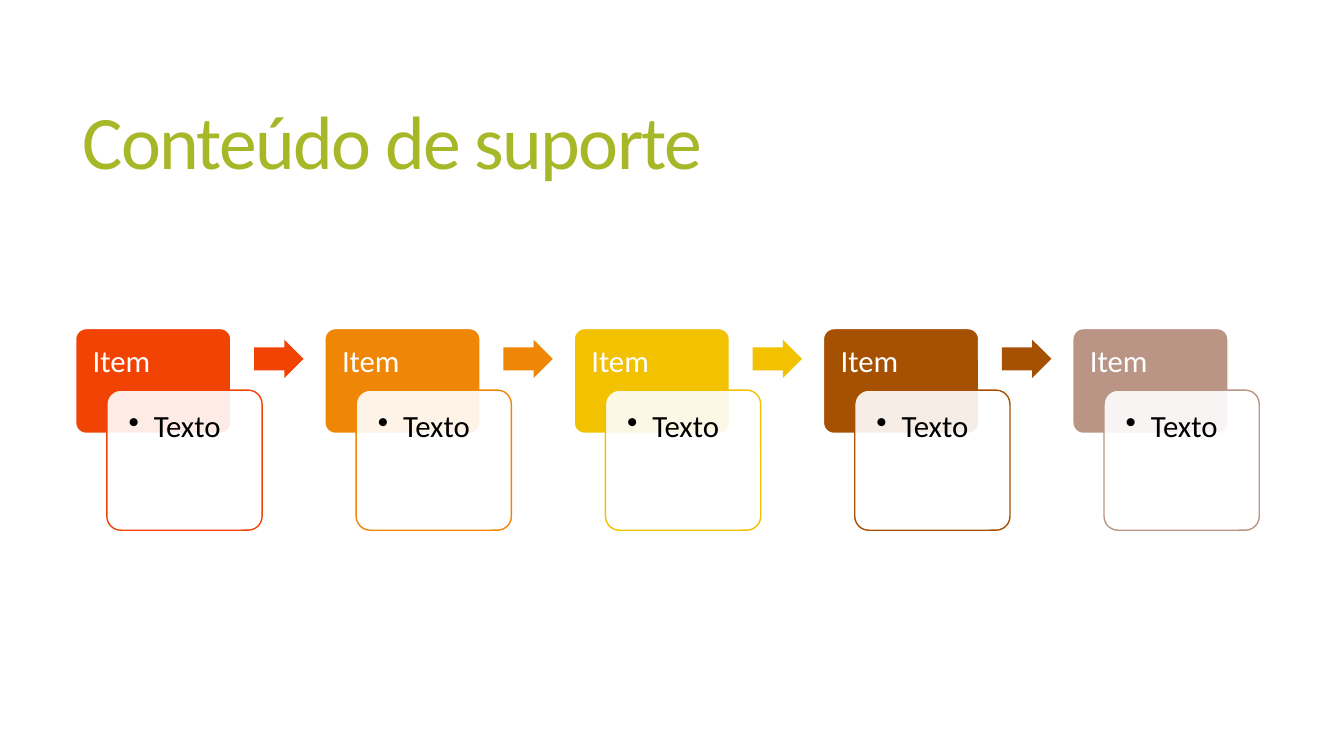
import lxml.etree
import pptx
import pptx.dml.color
import pptx.enum.shapes
import pptx.enum.text
import pptx.oxml.ns
import pptx.util

Inches = pptx.util.Inches
Pt = pptx.util.Pt
Preset = pptx.enum.shapes.MSO_SHAPE
Anchor = pptx.enum.text.MSO_ANCHOR
qn = pptx.oxml.ns.qn

FONT = "Calibri"
STEP_COLORS = ["F04304", "EF8606", "F2C100", "A65001", "BA9585"]
FLOW_LEFT, FLOW_TOP = 0.75, 3.26
STEP_PITCH = 2.4725
TILE_WIDTH, TILE_HEIGHT = 1.54, 1.04
CARD_HEIGHT = 1.39
CARD_SHIFT_X, CARD_SHIFT_Y = 0.31, 0.61
CARD_MARGIN = 0.045
INSET = 0.17
ARROW_SHIFT_X, ARROW_SHIFT_Y = 1.77, 0.11
ARROW_WIDTH, ARROW_HEIGHT = 0.49, 0.38


def rgb(color):
    """Turn a hex string into a colour."""
    return pptx.dml.color.RGBColor.from_string(color)


def add_block(slide, preset, box, fill, line=None, adjustments=(0.1,), opacity=None):
    """Add a flat preset shape, outlined and see-through on request."""
    block = slide.shapes.add_shape(preset, *map(Inches, box))
    block.shadow.inherit = False
    for index, value in enumerate(adjustments):
        block.adjustments[index] = value
    block.fill.solid()
    block.fill.fore_color.rgb = rgb(fill)
    if opacity is not None:
        fill_color = block.fill._xPr.find(qn("a:solidFill"))[0]
        lxml.etree.SubElement(fill_color, qn("a:alpha"), val=str(opacity * 1000))
    if line:
        block.line.color.rgb = rgb(line)
        block.line.width = Pt(1)
    else:
        block.line.fill.background()


def format_paragraph(paragraph, size, color, line_spacing):
    """Set the font and line spacing of a paragraph."""
    paragraph.alignment = pptx.enum.text.PP_ALIGN.LEFT
    paragraph.line_spacing = line_spacing
    paragraph.font.name = FONT
    paragraph.font.size = Pt(size)
    paragraph.font.color.rgb = rgb(color)


def add_label(slide, box, text, color, bottom_inset, space_after, bulleted=False):
    """Add a top-anchored label, with a bullet on request."""
    frame = slide.shapes.add_textbox(*map(Inches, box)).text_frame
    frame.word_wrap = True
    frame.vertical_anchor = Anchor.TOP
    frame.margin_left = frame.margin_top = frame.margin_right = Inches(INSET)
    frame.margin_bottom = Inches(bottom_inset)
    paragraph = frame.paragraphs[0]
    paragraph.text = text
    if bulleted:
        paragraph.level = 1
        properties = paragraph._p.get_or_add_pPr()
        properties.set("marL", str(Inches(0.25)))
        properties.set("indent", str(-Inches(0.25)))
        lxml.etree.SubElement(properties, qn("a:buChar"), char="•")
    format_paragraph(paragraph, 22, color, 0.9)
    paragraph.space_after = Pt(space_after)


def add_title(slide, box, text):
    """Place and format the slide title."""
    title = slide.shapes.title
    title.left, title.top, title.width, title.height = map(Inches, box)
    frame = title.text_frame
    frame.text = text
    frame.word_wrap = True
    frame.auto_size = pptx.enum.text.MSO_AUTO_SIZE.NONE
    frame.vertical_anchor = Anchor.MIDDLE
    paragraph = frame.paragraphs[0]
    format_paragraph(paragraph, 54, "A6B727", 0.85)
    paragraph.runs[0]._r.get_or_add_rPr().set("spc", "-120")


def add_step(slide, left, top, color, has_arrow):
    """Add a coloured tile, its overlapping card and the arrow to the next step."""
    add_block(slide, Preset.ROUNDED_RECTANGLE,
              (left, top, TILE_WIDTH, TILE_HEIGHT), color, "FFFFFF")
    add_label(slide, (left, top, TILE_WIDTH, 0.62), "Item", "FFFFFF", 0.09, 7.7)

    card_left, card_top = left + CARD_SHIFT_X, top + CARD_SHIFT_Y
    add_block(slide, Preset.ROUNDED_RECTANGLE,
              (card_left, card_top, TILE_WIDTH, CARD_HEIGHT), "FFFFFF", color, opacity=90)
    card_label = (card_left + CARD_MARGIN, card_top + CARD_MARGIN,
                  TILE_WIDTH - 2 * CARD_MARGIN, CARD_HEIGHT - 2 * CARD_MARGIN)
    add_label(slide, card_label, "Texto", "000000", INSET, 3.3, bulleted=True)

    if has_arrow:
        arrow = (left + ARROW_SHIFT_X, top + ARROW_SHIFT_Y, ARROW_WIDTH, ARROW_HEIGHT)
        add_block(slide, Preset.RIGHT_ARROW, arrow, color, adjustments=(0.6, 0.5))


def add_flow(slide, left, top):
    """Lay out the steps at an equal pitch."""
    for index, color in enumerate(STEP_COLORS):
        add_step(slide, left + index * STEP_PITCH, top, color,
                 has_arrow=index < len(STEP_COLORS) - 1)


def main():
    """Build and save the slide."""
    presentation = pptx.Presentation()
    presentation.slide_width = Inches(13.33)
    presentation.slide_height = Inches(7.5)
    slide = presentation.slides.add_slide(presentation.slide_layouts[5])
    add_title(slide, (0.72, 0.55, 11.78, 1.81), "Conteúdo de suporte")
    add_flow(slide, FLOW_LEFT, FLOW_TOP)
    presentation.save("out.pptx")


if __name__ == "__main__":
    main()
